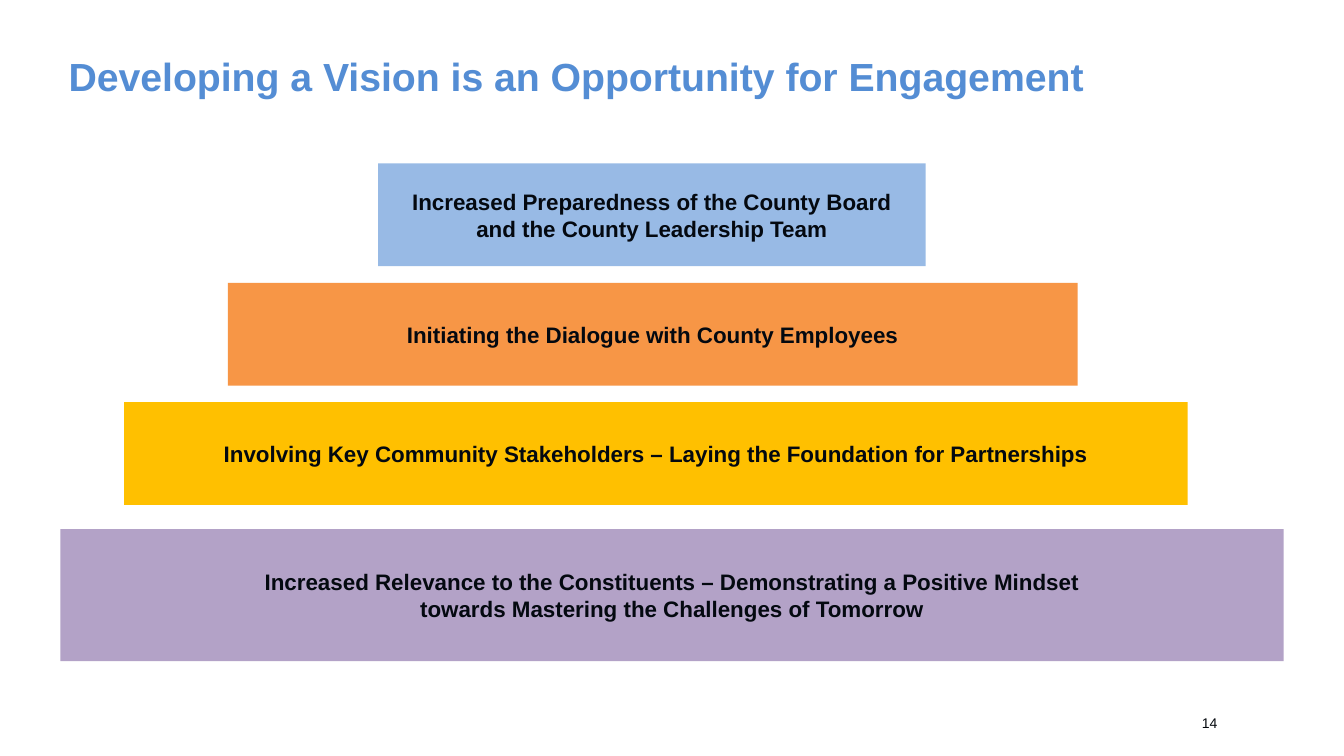
from dataclasses import dataclass

from pptx import Presentation
from pptx.dml.color import RGBColor
from pptx.enum.shapes import MSO_SHAPE
from pptx.enum.text import MSO_ANCHOR, PP_ALIGN
from pptx.util import Inches, Pt


@dataclass(frozen=True)
class Theme:
    font: str = "Arial"
    title_color: str = "548DD4"
    number_color: str = "03070C"
    tier_text: str = "040910"
    tier_fills: tuple = ("98BAE5", "F79646", "FFC000", "B3A2C7")
    title_size: int = 28
    tier_size: int = 16
    number_size: int = 10


class PyramidSlide:
    """Places styled elements on one slide, with lengths in percent of its size."""

    def __init__(self, deck, theme):
        self.deck = deck
        self.theme = theme
        self.page = deck.slides.add_slide(deck.slide_layouts[6])

    def area(self, left, top, width, height):
        across, down = self.deck.slide_width / 100, self.deck.slide_height / 100
        return (round(left * across), round(top * down),
                round(width * across), round(height * down))

    def set_lines(self, box, lines, size, color, bold, align, anchor):
        frame = box.text_frame
        frame.word_wrap = True
        frame.vertical_anchor = anchor
        para = frame.paragraphs[0]
        para.alignment = align
        for index, line in enumerate(lines):
            if index:
                para.add_line_break()
            span = para.add_run()
            span.text = line
            span.font.name = self.theme.font
            span.font.size = Pt(size)
            span.font.bold = bold
            span.font.color.rgb = RGBColor.from_string(color)

    def label(self, area, text, size, color, bold=False, anchor=MSO_ANCHOR.TOP):
        box = self.page.shapes.add_textbox(*self.area(*area))
        frame = box.text_frame
        frame.margin_left = frame.margin_top = 0
        frame.margin_right = frame.margin_bottom = 0
        self.set_lines(box, [text], size, color, bold, PP_ALIGN.LEFT, anchor)

    def title(self, area, text):
        self.label(area, text, self.theme.title_size, self.theme.title_color, bold=True)

    def number(self, area, text):
        self.label(area, text, self.theme.number_size, self.theme.number_color,
                   anchor=MSO_ANCHOR.MIDDLE)

    def tier(self, area, lines, fill):
        box = self.page.shapes.add_shape(MSO_SHAPE.RECTANGLE, *self.area(*area))
        box.shadow.inherit = False
        box.fill.solid()
        box.fill.fore_color.rgb = RGBColor.from_string(fill)
        box.line.fill.background()
        self.set_lines(box, lines, self.theme.tier_size, self.theme.tier_text, True,
                       PP_ALIGN.CENTER, MSO_ANCHOR.MIDDLE)


def main():
    deck = Presentation()
    deck.slide_width, deck.slide_height = Inches(13.33), Inches(7.5)
    theme = Theme()
    slide = PyramidSlide(deck, theme)
    slide.title((5.1, 6.93, 85, 6.67), "Developing a Vision is an Opportunity for Engagement")
    slide.number((89.42, 92.93, 3.3, 5.33), "14")

    first_row, row_step, row_height = 21.6, 15.8, 13.6
    upper_tiers = [
        (28.13, 40.74, ["Increased Preparedness of the County Board",
                        "and the County Leadership Team"]),
        (16.95, 63.24, ["Initiating the Dialogue with County Employees"]),
        (9.23, 79.14, ["Involving Key Community Stakeholders – "
                       "Laying the Foundation for Partnerships"]),
    ]
    for row, (left, width, lines) in enumerate(upper_tiers):
        top = first_row + row * row_step
        slide.tier((left, top, width, row_height), lines, theme.tier_fills[row])
    slide.tier((4.5, 70, 91, 17.47),
               ["Increased Relevance to the Constituents – Demonstrating a Positive Mindset",
                "towards Mastering the Challenges of Tomorrow"],
               theme.tier_fills[-1])
    deck.save("out.pptx")


if __name__ == "__main__":
    main()
